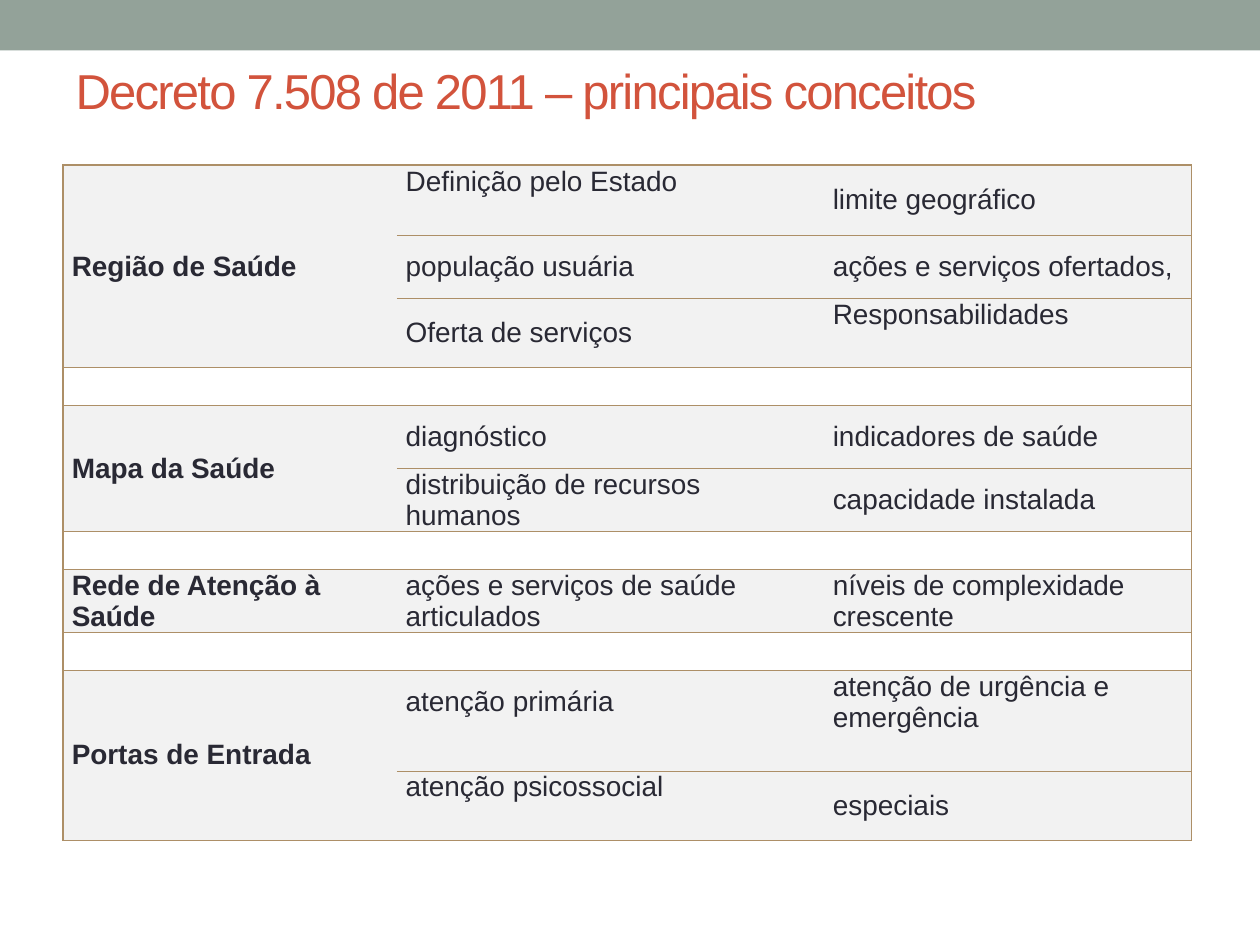
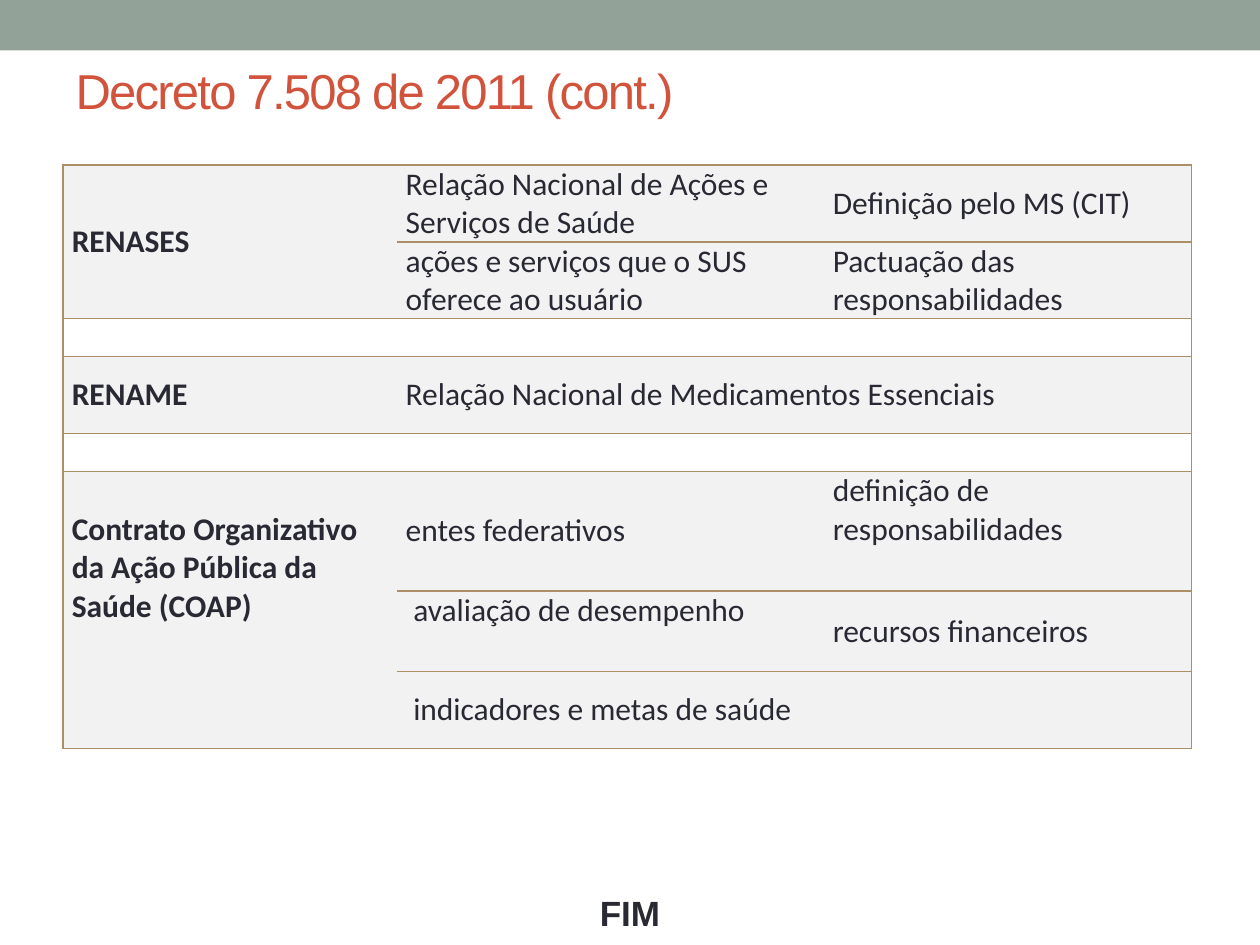
from dataclasses import dataclass

from lxml import etree
from pptx import Presentation
from pptx.dml.color import RGBColor
from pptx.enum.shapes import MSO_SHAPE
from pptx.enum.text import MSO_ANCHOR, PP_ALIGN
from pptx.oxml.ns import qn
from pptx.util import Inches, Pt

RECTANGLE = MSO_SHAPE.RECTANGLE
MIDDLE = MSO_ANCHOR.MIDDLE
LEFT, CENTER = PP_ALIGN.LEFT, PP_ALIGN.CENTER


@dataclass(frozen=True)
class Theme:
    band: str = "93A299"
    title: str = "D2533C"
    text: str = "292934"
    cell: str = "F2F2F2"
    border: str = "AD8F67"
    heading_font: str = "Arial"
    title_size: int = 28
    closing_size: int = 20
    gap_size: int = 12


theme = Theme()
WIDTH, HEIGHT = 10, 7.5
MARGIN = WIDTH / 20
BAND_HEIGHT = 0.4
TITLE_TOP, TITLE_HEIGHT = 0.42, 0.58
TABLE_TOP = 1.31
COLUMNS = (2.65, 3.39, 2.92)
GAP_ROW = 0.3
CELL_MARGIN = 0.07
NO_GRID_STYLE = "{2D5ABB26-0587-4C30-8999-92F81FD0307C}"

# Each group is a label, the lines left free below it, and its rows.
# Each row is a height and cells of text, lines left free below and indent.
SLIDES = [
    {
        "title": "Decreto 7.508 de 2011 – principais conceitos",
        "font": "Arial",
        "size": 16,
        "groups": [
            ("Região de Saúde", 0, [
                (0.56, [("Definição pelo Estado", 1, 0), ("limite geográfico", 0, 0)]),
                (0.5, [("população usuária", 0, 0), ("ações e serviços ofertados,", 0, 0)]),
                (0.55, [("Oferta de serviços", 0, 0), ("Responsabilidades", 1, 0)]),
            ]),
            ("Mapa da Saúde", 0, [
                (0.5, [("diagnóstico", 0, 0), ("indicadores de saúde", 0, 0)]),
                (0.5, [("distribuição de recursos humanos", 0, 0), ("capacidade instalada", 0, 0)]),
            ]),
            ("Rede de Atenção à Saúde", 0, [
                (0.5, [("ações e serviços de saúde articulados", 0, 0),
                       ("níveis de complexidade crescente", 0, 0)]),
            ]),
            ("Portas de Entrada", 0, [
                (0.8, [("atenção primária", 1, 0), ("atenção de urgência e emergência", 1, 0)]),
                (0.55, [("atenção psicossocial", 1, 0), ("especiais", 0, 0)]),
            ]),
        ],
    },
    {
        "title": "Decreto 7.508 de 2011 (cont.)",
        "font": "Calibri",
        "size": 18,
        "groups": [
            ("RENASES", 0, [
                (0.61, [("Relação Nacional de Ações e Serviços de Saúde", 0, 0),
                        ("Definição pelo MS (CIT)", 0, 0)]),
                (0.61, [("ações e serviços que o SUS oferece ao usuário", 0, 0),
                        ("Pactuação das responsabilidades", 0, 0)]),
            ]),
            ("RENAME", 0, [
                (0.61, [("Relação Nacional de Medicamentos Essenciais", 0, 0)]),
            ]),
            ("Contrato Organizativo da Ação Pública da Saúde (COAP)", 2, [
                (0.95, [("entes federativos", 0, 0), ("definição de responsabilidades", 1, 0)]),
                (0.63, [("avaliação de desempenho", 1, 0.06), ("recursos financeiros", 0, 0)]),
                (0.61, [("indicadores e metas de saúde", 0, 0.06)]),
            ]),
        ],
    },
]


def format_text(text_frame, font, size, color, bold=False, align=LEFT):
    paragraph = text_frame.paragraphs[0]
    paragraph.alignment = align
    for run in paragraph.runs:
        run.font.name = font
        run.font.size = Pt(size)
        run.font.bold = bold
        run.font.color.rgb = RGBColor.from_string(color)
    return paragraph


def style_cell(cell, sides, filled):
    cell.margin_left = cell.margin_right = Inches(CELL_MARGIN)
    cell.margin_top = cell.margin_bottom = 0
    cell.vertical_anchor = MIDDLE
    if filled:
        cell.fill.solid()
        cell.fill.fore_color.rgb = RGBColor.from_string(theme.cell)
    else:
        cell.fill.background()
    properties = cell._tc.get_or_add_tcPr()
    for position, side in enumerate(sides):
        line = etree.Element(qn(f"a:ln{side}"), w=str(Pt(0.75)))
        fill = etree.SubElement(line, qn("a:solidFill"))
        etree.SubElement(fill, qn("a:srgbClr"), val=theme.border)
        properties.insert(position, line)


presentation = Presentation()
presentation.slide_width = Inches(WIDTH)
presentation.slide_height = Inches(HEIGHT)
layout = presentation.slide_layouts[5]

for content in SLIDES:
    slide = presentation.slides.add_slide(layout)

    title = slide.shapes.title
    title.left, title.top = Inches(MARGIN), Inches(TITLE_TOP)
    title.width, title.height = Inches(WIDTH - 2 * MARGIN), Inches(TITLE_HEIGHT)
    title.text_frame.text = content["title"]
    title.text_frame.vertical_anchor = MIDDLE
    paragraph = format_text(title.text_frame, theme.heading_font, theme.title_size, theme.title)
    paragraph.runs[0].font._element.set("spc", "-100")

    groups = content["groups"]
    heights = []
    for label, free_lines, rows in groups:
        if heights:
            heights.append(GAP_ROW)
        heights.extend(height for height, cells in rows)

    frame = slide.shapes.add_table(
        len(heights), len(COLUMNS), Inches(MARGIN), Inches(TABLE_TOP),
        Inches(sum(COLUMNS)), Inches(sum(heights)))
    table = frame.table
    table.first_row = table.horz_banding = False
    table._tbl.tblPr.find(qn("a:tableStyleId")).text = NO_GRID_STYLE
    for column, width in zip(table.columns, COLUMNS):
        column.width = Inches(width)
    for row, height in zip(table.rows, heights):
        row.height = Inches(height)

    line_height = content["size"] * 1.34 / 72
    row_index = 0
    for label, free_lines, rows in groups:
        if row_index:
            for column_index, sides in enumerate(("LTB", "TB", "RTB")):
                cell = table.cell(row_index, column_index)
                style_cell(cell, sides, filled=False)
                etree.SubElement(cell.text_frame.paragraphs[0]._p, qn("a:endParaRPr"),
                                 sz=str(theme.gap_size * 100))
            row_index += 1

        entries = [(row_index, 0, label, free_lines, 0)]
        if len(rows) > 1:
            table.cell(row_index, 0).merge(table.cell(row_index + len(rows) - 1, 0))
        for height, cells in rows:
            if len(cells) == 1:
                table.cell(row_index, 1).merge(table.cell(row_index, 2))
            for column_index, (text, below, indent) in enumerate(cells, 1):
                entries.append((row_index, column_index, text, below, indent))
            row_index += 1

        for entry_row, entry_column, text, below, indent in entries:
            cell = table.cell(entry_row, entry_column)
            last_column = entry_column + cell.span_width == len(COLUMNS) if cell.is_merge_origin \
                else entry_column == len(COLUMNS) - 1
            sides = "LTB" if entry_column == 0 else "RTB" if last_column else "TB"
            style_cell(cell, sides, filled=True)
            cell.margin_left = Inches(CELL_MARGIN + indent)
            cell.margin_bottom = Inches(below * line_height)
            cell.text_frame.text = text
            format_text(cell.text_frame, content["font"], content["size"], theme.text,
                        bold=entry_column == 0)

band = slide.shapes.add_shape(RECTANGLE, 0, 0, Inches(WIDTH), Inches(BAND_HEIGHT))
band.shadow.inherit = False
band.fill.solid()
band.fill.fore_color.rgb = RGBColor.from_string(theme.band)
band.line.fill.background()
layout.shapes._spTree.insert(2, band._element)

closing_top = HEIGHT * 0.91
closing = slide.shapes.add_textbox(
    0, Inches(closing_top), Inches(WIDTH), Inches(HEIGHT - closing_top))
closing.text_frame.word_wrap = True
closing.text_frame.text = "FIM"
paragraph = format_text(closing.text_frame, theme.heading_font, theme.closing_size,
                        theme.text, bold=True, align=CENTER)
paragraph.line_spacing = 1.6
paragraph.space_before = Pt(4)

presentation.save("out.pptx")
